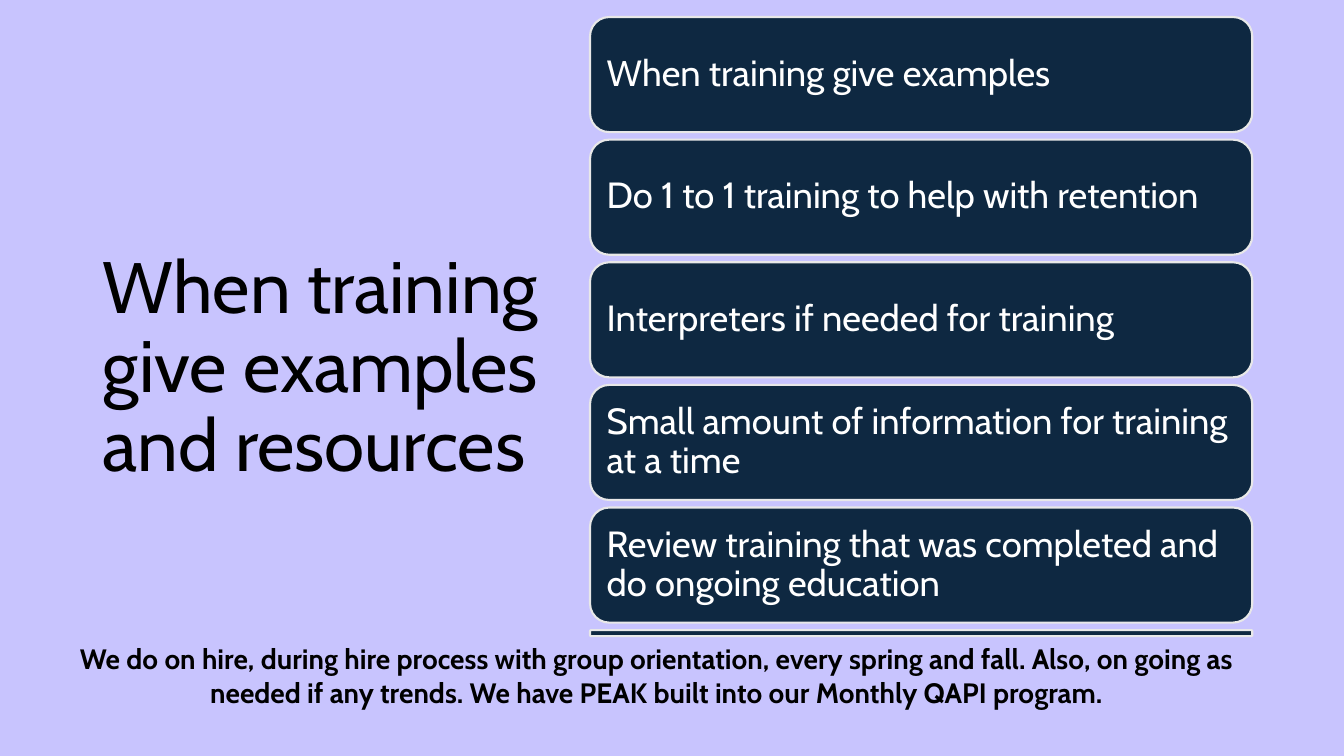
import pptx
import pptx.dml.color
import pptx.enum.shapes
import pptx.enum.text
import pptx.util
from dataclasses import dataclass

Cm = pptx.util.Cm
Anchor = pptx.enum.text.MSO_ANCHOR
Align = pptx.enum.text.PP_ALIGN


@dataclass(frozen=True)
class Theme:
    font: str = "Cabin"
    background: str = "C8C4FE"
    card: str = "0E2841"
    border: str = "E8E8E8"
    dark_text: str = "000000"
    light_text: str = "FFFFFF"
    title_size: int = 52
    card_size: int = 26
    note_size: int = 20
    border_width: float = 1.5


def rgb(value):
    return pptx.dml.color.RGBColor.from_string(value)


class TrainingSlide:
    def __init__(self, presentation, theme):
        self.theme = theme
        self.slide = presentation.slides.add_slide(presentation.slide_layouts[5])
        fill = self.slide.background.fill
        fill.solid()
        fill.fore_color.rgb = rgb(theme.background)

    def set_text(self, frame, text, size, color, anchor, align, spacing=None, bold=False):
        frame.word_wrap = True
        frame.auto_size = pptx.enum.text.MSO_AUTO_SIZE.NONE
        frame.vertical_anchor = anchor
        paragraph = frame.paragraphs[0]
        paragraph.text = text
        paragraph.alignment = align
        paragraph.line_spacing = spacing
        font = paragraph.font
        font.name = self.theme.font
        font.size = pptx.util.Pt(size)
        font.bold = bold
        font.color.rgb = rgb(color)

    def title(self, text, left, top, width, height):
        title = self.slide.shapes.title
        title.left, title.top = Cm(left), Cm(top)
        title.width, title.height = Cm(width), Cm(height)
        self.set_text(title.text_frame, text, self.theme.title_size,
                      self.theme.dark_text, Anchor.MIDDLE, Align.LEFT, spacing=0.9)

    def card(self, left, top, width, height, text=None):
        card = self.slide.shapes.add_shape(
            pptx.enum.shapes.MSO_SHAPE.ROUNDED_RECTANGLE,
            Cm(left), Cm(top), Cm(width), Cm(height))
        card.shadow.inherit = False
        card.fill.solid()
        card.fill.fore_color.rgb = rgb(self.theme.card)
        card.line.color.rgb = rgb(self.theme.border)
        card.line.width = pptx.util.Pt(self.theme.border_width)
        if text:
            frame = card.text_frame
            frame.margin_left = frame.margin_right = Cm(0.28)
            frame.margin_top = frame.margin_bottom = Cm(0.28)
            self.set_text(frame, text, self.theme.card_size,
                          self.theme.light_text, Anchor.MIDDLE, Align.LEFT, spacing=0.9)

    def note(self, text, left, top, width, height):
        note = self.slide.shapes.add_textbox(Cm(left), Cm(top), Cm(width), Cm(height))
        self.set_text(note.text_frame, text, self.theme.note_size,
                      self.theme.dark_text, Anchor.TOP, Align.CENTER, bold=True)


TIPS = [
    "When training give examples",
    "Do 1 to 1 training to help with retention",
    "Interpreters if needed for training",
    "Small amount of information for training at a time",
    "Review training that was completed and do ongoing education",
]
CARD_LEFT, CARD_TOP, CARD_WIDTH, CARD_HEIGHT = 14.87, 0.43, 16.69, 2.9
CARD_STEP = 3.09


def main():
    presentation = pptx.Presentation()
    presentation.slide_width, presentation.slide_height = Cm(33.87), Cm(19.05)
    page = TrainingSlide(presentation, Theme())

    # Title
    page.title("When training give examples and resources", 2.34, 1.55, 13.51, 15.49)

    # Stack of tips, closed by a thin bar
    for row, tip in enumerate(TIPS):
        page.card(CARD_LEFT, CARD_TOP + row * CARD_STEP, CARD_WIDTH, CARD_HEIGHT, tip)
    page.card(CARD_LEFT, CARD_TOP + len(TIPS) * CARD_STEP, CARD_WIDTH, 0.15)

    # Schedule note
    page.note("We do on hire, during hire process with group orientation, every spring "
              "and fall. Also, on going as needed if any trends. We have PEAK built "
              "into our Monthly QAPI program.", 1.04, 16.05, 31.01, 1.96)

    presentation.save("out.pptx")


if __name__ == "__main__":
    main()
